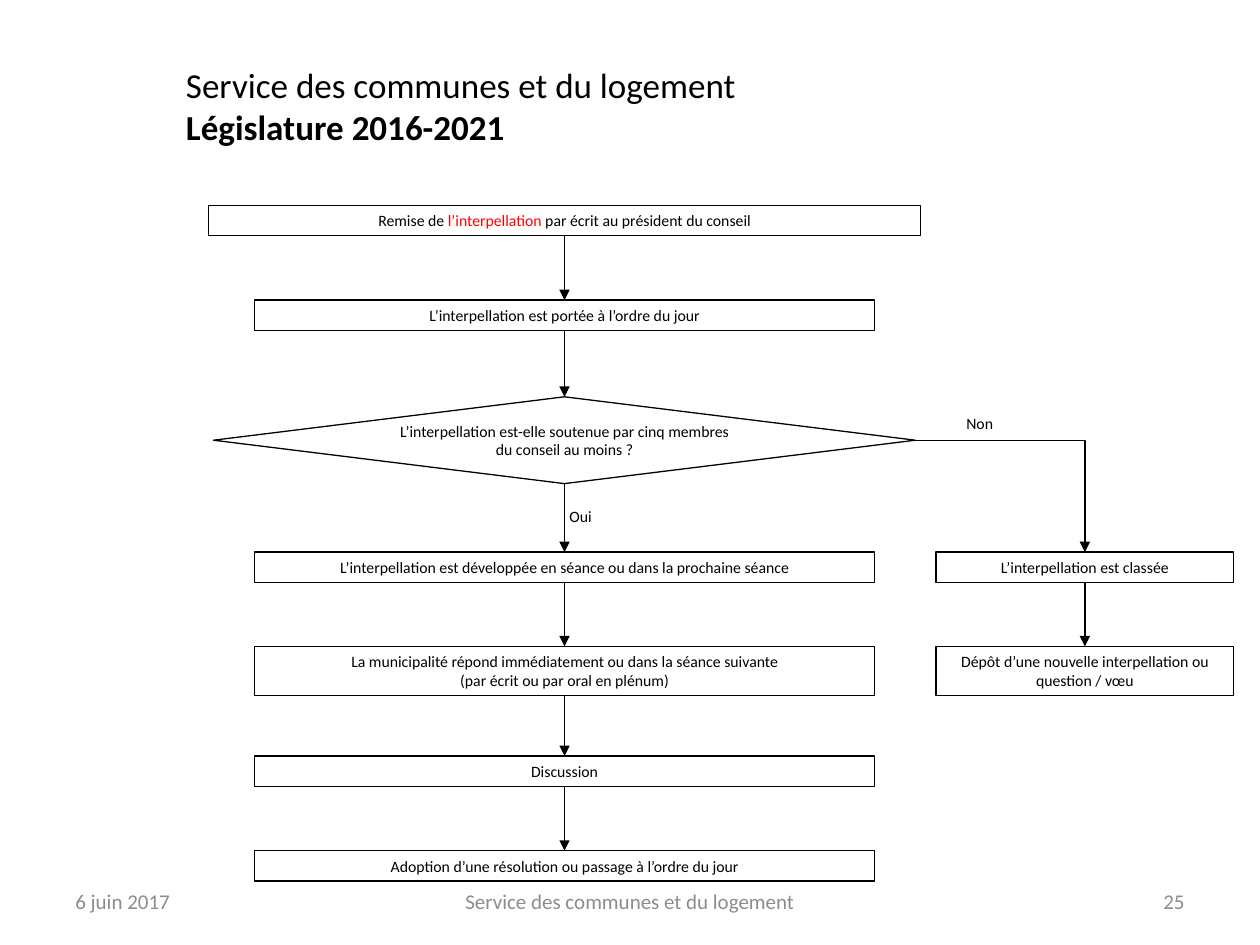
from lxml import etree
from pptx import Presentation
from pptx.dml.color import RGBColor
from pptx.enum.shapes import MSO_CONNECTOR, MSO_SHAPE
from pptx.enum.text import MSO_ANCHOR, PP_ALIGN
from pptx.oxml.ns import qn
from pptx.util import Cm, Pt

BLACK = RGBColor(0x00, 0x00, 0x00)
WHITE = RGBColor(0xFF, 0xFF, 0xFF)
RED = RGBColor(0xFF, 0x00, 0x00)
GREY = RGBColor(0x8C, 0x8C, 0x8C)

LEFT, CENTER, RIGHT = PP_ALIGN.LEFT, PP_ALIGN.CENTER, PP_ALIGN.RIGHT
MIDDLE = MSO_ANCHOR.MIDDLE
RECTANGLE, DIAMOND = MSO_SHAPE.RECTANGLE, MSO_SHAPE.DIAMOND
STRAIGHT, ELBOW = MSO_CONNECTOR.STRAIGHT, MSO_CONNECTOR.ELBOW
TOP_SIDE, BOTTOM_SIDE, RIGHT_SIDE = 0, 2, 3

# Flowchart columns and box sizes, in centimetres
MAIN_AXIS, SIDE_AXIS = 11.38, 21.87
MAIN_WIDTH, WIDE_WIDTH, SIDE_WIDTH = 12.5, 14.35, 6
ONE_LINE, TWO_LINES = 0.61, 0.99
DEVELOPED_TOP, ANSWER_TOP = 11.13, 13.03


class FlowPage:
    font_name = "Calibri"
    line_width = Pt(0.75)

    def __init__(self, page):
        self.page = page

    def fill_text(self, shape, lines, size, color, align, margins):
        frame = shape.text_frame
        frame.word_wrap = True
        frame.vertical_anchor = MIDDLE
        frame.margin_left = frame.margin_right = Cm(margins[0])
        frame.margin_top = frame.margin_bottom = Cm(margins[1])
        frame.text = "\n".join(lines)
        for para in frame.paragraphs:
            para.alignment = align
            for span in para.runs:
                self.style(span, size, color)

    def style(self, span, size, color):
        span.font.name = self.font_name
        span.font.size = Pt(size)
        span.font.color.rgb = color

    def text(self, left, top, width, height, lines, size=9, color=BLACK,
             align=LEFT, margins=(0.25, 0.13)):
        box = self.page.shapes.add_textbox(Cm(left), Cm(top), Cm(width), Cm(height))
        self.fill_text(box, lines, size, color, align, margins)
        return box

    def step(self, axis, top, width, height, lines, kind=RECTANGLE):
        box = self.page.shapes.add_shape(
            kind, Cm(axis - width / 2), Cm(top), Cm(width), Cm(height))
        box.shadow.inherit = False
        box.fill.solid()
        box.fill.fore_color.rgb = WHITE
        box.line.color.rgb = BLACK
        box.line.width = self.line_width
        self.fill_text(box, lines, 9, BLACK, CENTER, (0.2, 0.1))
        return box

    def arrow(self, source, target, kind=STRAIGHT, start_side=BOTTOM_SIDE):
        arrow = self.page.shapes.add_connector(kind, 0, 0, 0, 0)
        arrow.begin_connect(source, start_side)
        arrow.end_connect(target, TOP_SIDE)
        arrow.line.color.rgb = BLACK
        arrow.line.width = self.line_width
        properties = arrow._element.spPr
        if kind == ELBOW:  # a single bend
            properties.find(qn("a:prstGeom")).set("prst", "bentConnector2")
        etree.SubElement(properties.find(qn("a:ln")), qn("a:tailEnd"), type="triangle")
        etree.SubElement(properties, qn("a:effectLst"))


def main():
    deck = Presentation()
    deck.slide_width, deck.slide_height = Cm(25.4), Cm(19.05)
    flow = FlowPage(deck.slides.add_slide(deck.slide_layouts[6]))

    # Title
    title = flow.text(3.5, 0.53, 20.65, 3.18,
                      ["Service des communes et du logement", "Législature 2016-2021"], 20)
    title.text_frame.paragraphs[1].runs[0].font.bold = True

    # Footer
    for left, width, words, align in [
        (1.27, 5.93, "6 juin 2017", LEFT),
        (8.68, 8.04, "Service des communes et du logement", CENTER),
        (18.2, 5.93, "25", RIGHT),
    ]:
        flow.text(left, 17.66, width, 1.01, [words], 12, GREY, align)

    # Main column
    main_steps = [flow.step(MAIN_AXIS, *step) for step in [
        (4.14, WIDE_WIDTH, ONE_LINE, ["Remise de "]),
        (6.05, MAIN_WIDTH, ONE_LINE, ["L’interpellation est portée à l’ordre du jour"]),
        (8, 14.15, 1.75,
         ["L’interpellation est-elle soutenue par cinq membres du conseil au moins ?"],
         DIAMOND),
        (DEVELOPED_TOP, MAIN_WIDTH, ONE_LINE,
         ["L’interpellation est développée en séance ou dans la prochaine séance"]),
        (ANSWER_TOP, MAIN_WIDTH, TWO_LINES,
         ["La municipalité répond immédiatement ou dans la séance suivante",
          "(par écrit ou par oral en plénum)"]),
        (15.24, MAIN_WIDTH, ONE_LINE, ["Discussion"]),
        (17.15, MAIN_WIDTH, ONE_LINE,
         ["Adoption d’une résolution ou passage à l’ordre du jour"]),
    ]]
    opening = main_steps[0].text_frame.paragraphs[0]
    for words, color in [("l’interpellation", RED),
                         (" par écrit au président du conseil", BLACK)]:
        span = opening.add_run()
        span.text = words
        flow.style(span, 9, color)

    # Side column
    closed = flow.step(SIDE_AXIS, DEVELOPED_TOP, SIDE_WIDTH, ONE_LINE,
                       ["L’interpellation est classée"])
    renewed = flow.step(SIDE_AXIS, ANSWER_TOP, SIDE_WIDTH, TWO_LINES,
                        ["Dépôt d’une nouvelle interpellation ou question / vœu"])

    # Arrows
    for source, target in zip(main_steps, main_steps[1:]):
        flow.arrow(source, target)
    decision = main_steps[2]
    flow.arrow(decision, closed, ELBOW, RIGHT_SIDE)
    flow.arrow(closed, renewed)

    # Branch labels
    flow.text(19.28, 8.26, 1.78, 0.53, ["Non"], margins=(0.2, 0))
    flow.text(11.28, 10.16, 2.24, 0.51, ["Oui"], margins=(0.2, 0))

    deck.save("out.pptx")


if __name__ == "__main__":
    main()
